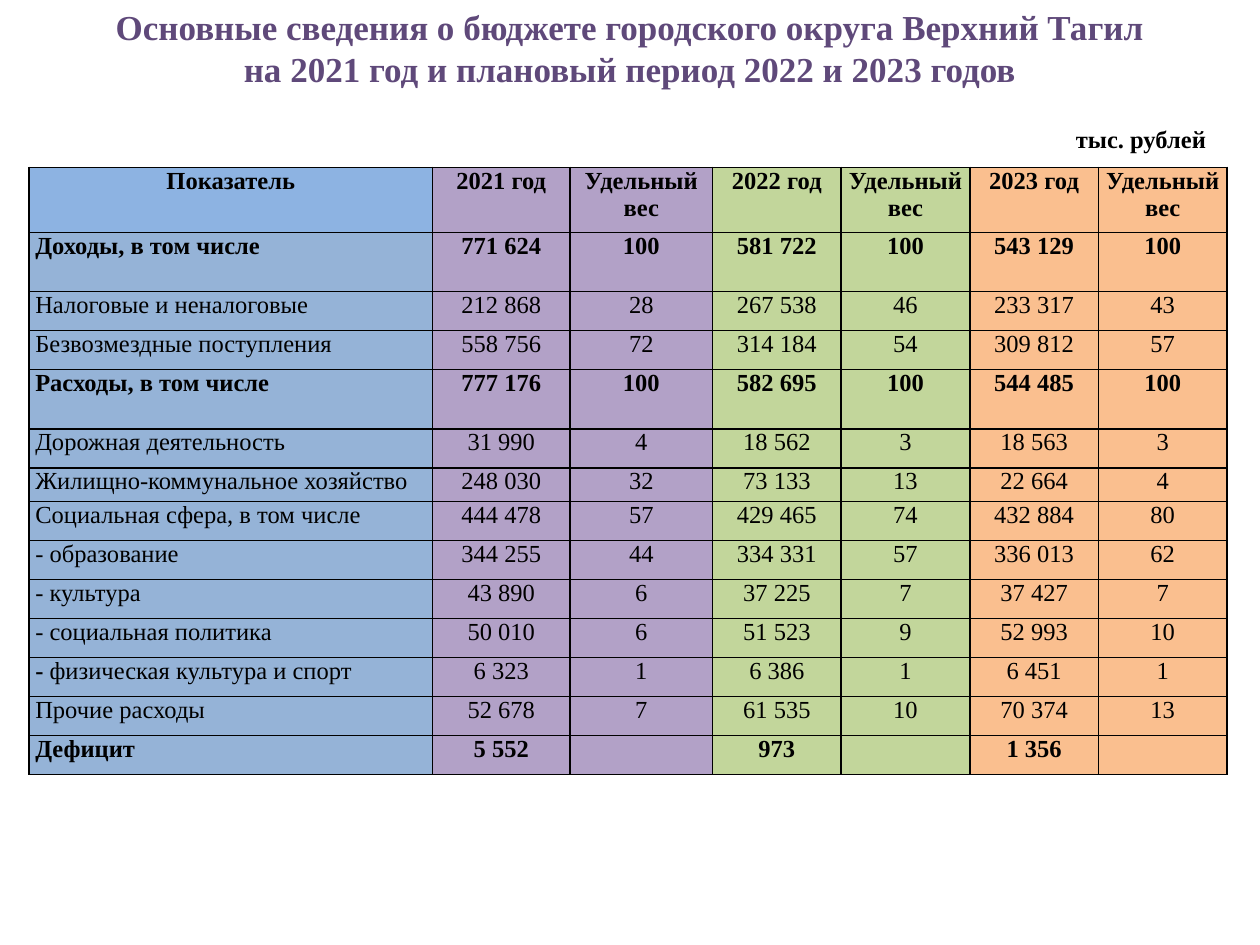
from lxml.etree import SubElement
from pptx import Presentation
from pptx.dml.color import RGBColor
from pptx.enum.text import MSO_ANCHOR, PP_ALIGN
from pptx.oxml.ns import qn
from pptx.util import Inches, Pt

SLIDE_W, SLIDE_H = Inches(10), Inches(7.5)
FONT = "Times New Roman"
COLORS = {
    "title": "5F497A", "text": "000000", "border": "000000",
    "header": "8DB3E2", "indicator": "95B3D7",
    "2021": "B2A1C7", "2022": "C2D69B", "2023": "FABF8F",
}
COLUMN_FILLS = ["indicator", "2021", "2021", "2022", "2022", "2023", "2023"]
COLUMN_WEIGHTS = [3.2, 1.09, 1.13] + [1.02] * 4
HEADER_WEIGHT, TOTAL_WEIGHT, COMPACT_WEIGHT, ROW_WEIGHT = 0.52, 0.47, 0.27, 0.31

HEADER = ["Показатель", "2021 год", "Удельный вес", "2022 год", "Удельный вес",
          "2023 год", "Удельный вес"]
BUDGET = [
    ["Доходы, в том числе", "771 624", "100", "581 722", "100", "543 129", "100"],
    ["Налоговые и неналоговые", "212 868", "28", "267 538", "46", "233 317", "43"],
    ["Безвозмездные поступления", "558 756", "72", "314 184", "54", "309 812", "57"],
    ["Расходы, в том числе", "777 176", "100", "582 695", "100", "544 485", "100"],
    ["Дорожная деятельность", "31 990", "4", "18 562", "3", "18 563", "3"],
    ["Жилищно-коммунальное хозяйство", "248 030", "32", "73 133", "13", "22 664", "4"],
    ["Социальная сфера, в том числе", "444 478", "57", "429 465", "74", "432 884", "80"],
    ["- образование", "344 255", "44", "334 331", "57", "336 013", "62"],
    ["- культура", "43 890", "6", "37 225", "7", "37 427", "7"],
    ["- социальная политика", "50 010", "6", "51 523", "9", "52 993", "10"],
    ["- физическая культура и спорт", "6 323", "1", "6 386", "1", "6 451", "1"],
    ["Прочие расходы", "52 678", "7", "61 535", "10", "70 374", "13"],
    ["Дефицит", "5 552", "", "973", "", "1 356", ""],
]
TOTALS = {"Доходы, в том числе", "Расходы, в том числе"}
BOLD_ROWS = TOTALS | {"Показатель", "Дефицит"}
COMPACT_ROW = "Жилищно-коммунальное хозяйство"
BOLD_DASH_ROW = "- физическая культура и спорт"


def place(box):
    """Turn shares of the slide into left, top, width and height."""
    left, top, width, height = box
    return (round(left * SLIDE_W), round(top * SLIDE_H),
            round(width * SLIDE_W), round(height * SLIDE_H))


def write(frame, text, size=14, color="text", bold=False, align=PP_ALIGN.LEFT,
          bold_lead=0):
    """Write each line as a paragraph; the first bold_lead letters are bold."""
    for index, line in enumerate(text.split("\n")):
        paragraph = frame.add_paragraph() if index else frame.paragraphs[0]
        paragraph.alignment = align
        for part, weight in ((line[:bold_lead], True), (line[bold_lead:], bold)):
            if part:
                run = paragraph.add_run()
                run.text = part
                run.font.name, run.font.size, run.font.bold = FONT, Pt(size), weight
                run.font.color.rgb = RGBColor.from_string(COLORS[color])


def add_label(slide, box, text, wrap=True, anchor=MSO_ANCHOR.TOP, **style):
    frame = slide.shapes.add_textbox(*place(box)).text_frame
    frame.word_wrap = wrap
    frame.vertical_anchor = anchor
    write(frame, text, **style)


def style_cell(cell, fill):
    cell.margin_left = cell.margin_right = Inches(0.05)
    cell.margin_top = cell.margin_bottom = 0
    properties = cell._tc.get_or_add_tcPr()
    for side in ("a:lnL", "a:lnR", "a:lnT", "a:lnB"):
        line = SubElement(properties, qn(side), w=str(Pt(1)))
        solid = SubElement(line, qn("a:solidFill"))
        SubElement(solid, qn("a:srgbClr"), val=COLORS["border"])
    cell.fill.solid()
    cell.fill.fore_color.rgb = RGBColor.from_string(COLORS[fill])


def row_weight(name):
    if name == HEADER[0]:
        return HEADER_WEIGHT
    if name in TOTALS:
        return TOTAL_WEIGHT
    return COMPACT_WEIGHT if name == COMPACT_ROW else ROW_WEIGHT


def add_budget_table(slide, box):
    rows = [HEADER] + BUDGET
    left, top, width, height = place(box)
    table = slide.shapes.add_table(len(rows), len(HEADER), left, top, width, height).table
    table.horz_banding = False

    # Column and row sizes
    for column, weight in zip(table.columns, COLUMN_WEIGHTS):
        column.width = round(width * weight / sum(COLUMN_WEIGHTS))
    weights = [row_weight(row[0]) for row in rows]
    for row, weight in zip(table.rows, weights):
        row.height = round(height * weight / sum(weights))

    # Cells
    for r, values in enumerate(rows):
        name = values[0]
        for c, value in enumerate(values):
            cell = table.cell(r, c)
            is_name = c == 0 and r > 0
            style_cell(cell, "header" if r == c == 0 else COLUMN_FILLS[c])
            write(cell.text_frame, value, bold=name in BOLD_ROWS,
                  align=PP_ALIGN.LEFT if is_name else PP_ALIGN.CENTER,
                  bold_lead=2 if is_name and name == BOLD_DASH_ROW else 0)


def main():
    presentation = Presentation()
    presentation.slide_width, presentation.slide_height = SLIDE_W, SLIDE_H
    slide = presentation.slides.add_slide(presentation.slide_layouts[6])

    # Title
    add_label(slide, (0, 0, 1, 0.1),
              "Основные сведения о бюджете городского округа Верхний Тагил\n"
              "на 2021 год и плановый период 2022 и 2023 годов",
              anchor=MSO_ANCHOR.MIDDLE, size=20, color="title", bold=True,
              align=PP_ALIGN.CENTER)
    # Budget figures
    add_budget_table(slide, (0.023, 0.177, 0.951, 0.643))
    # Unit of measure
    add_label(slide, (0.844, 0.125, 0.124, 0.045), "тыс. рублей", wrap=False, bold=True)

    presentation.save("out.pptx")


if __name__ == "__main__":
    main()
